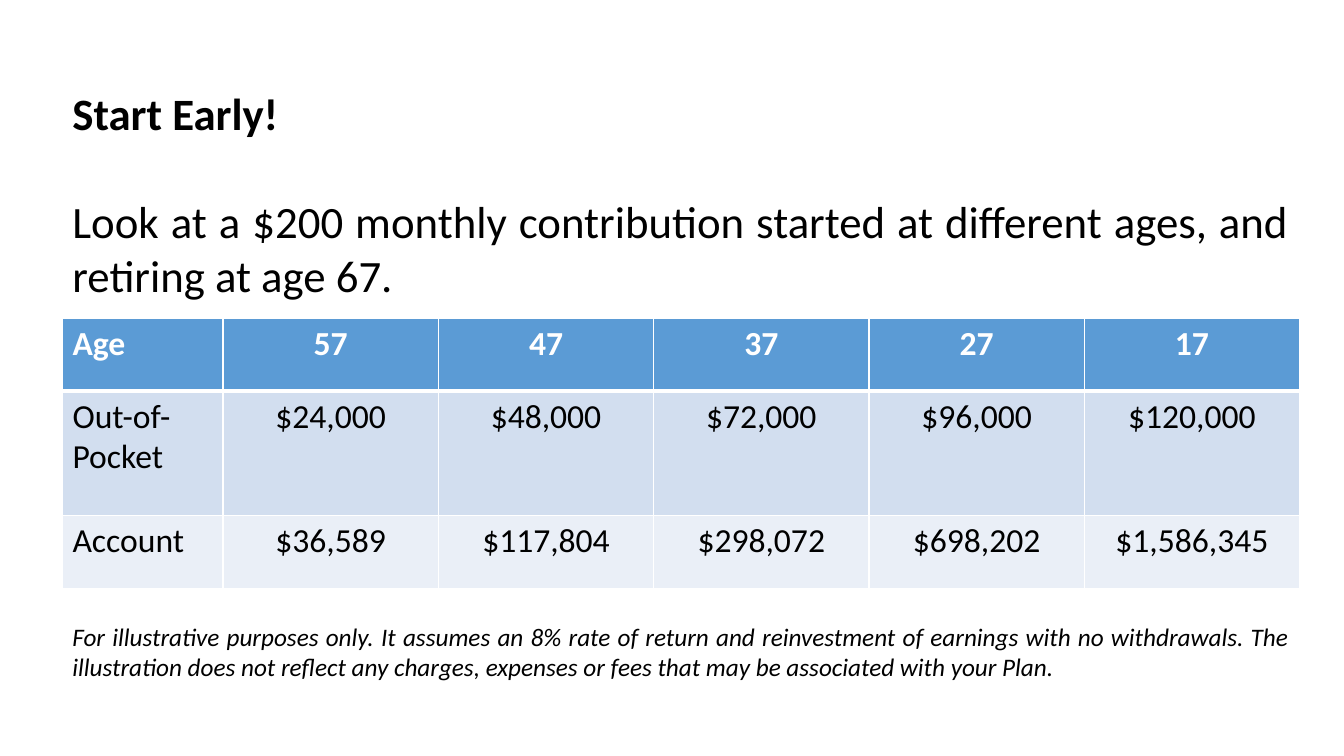
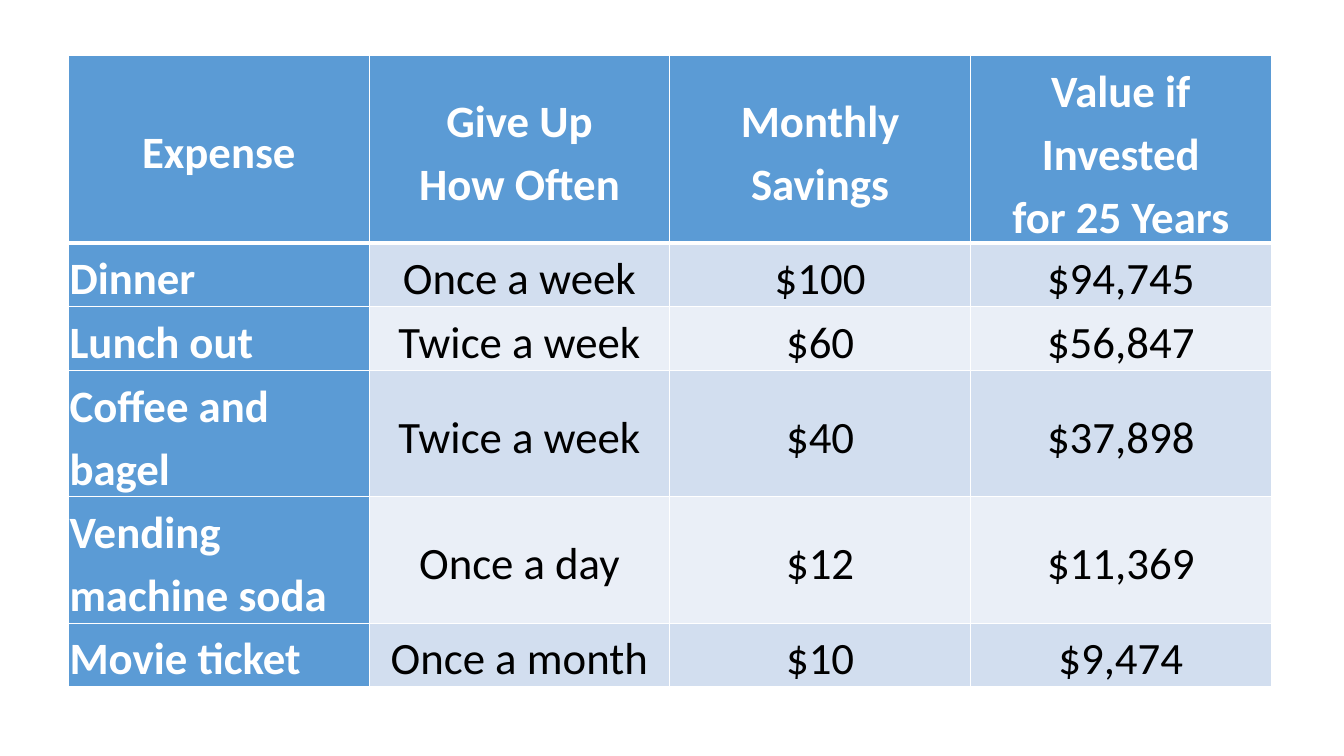
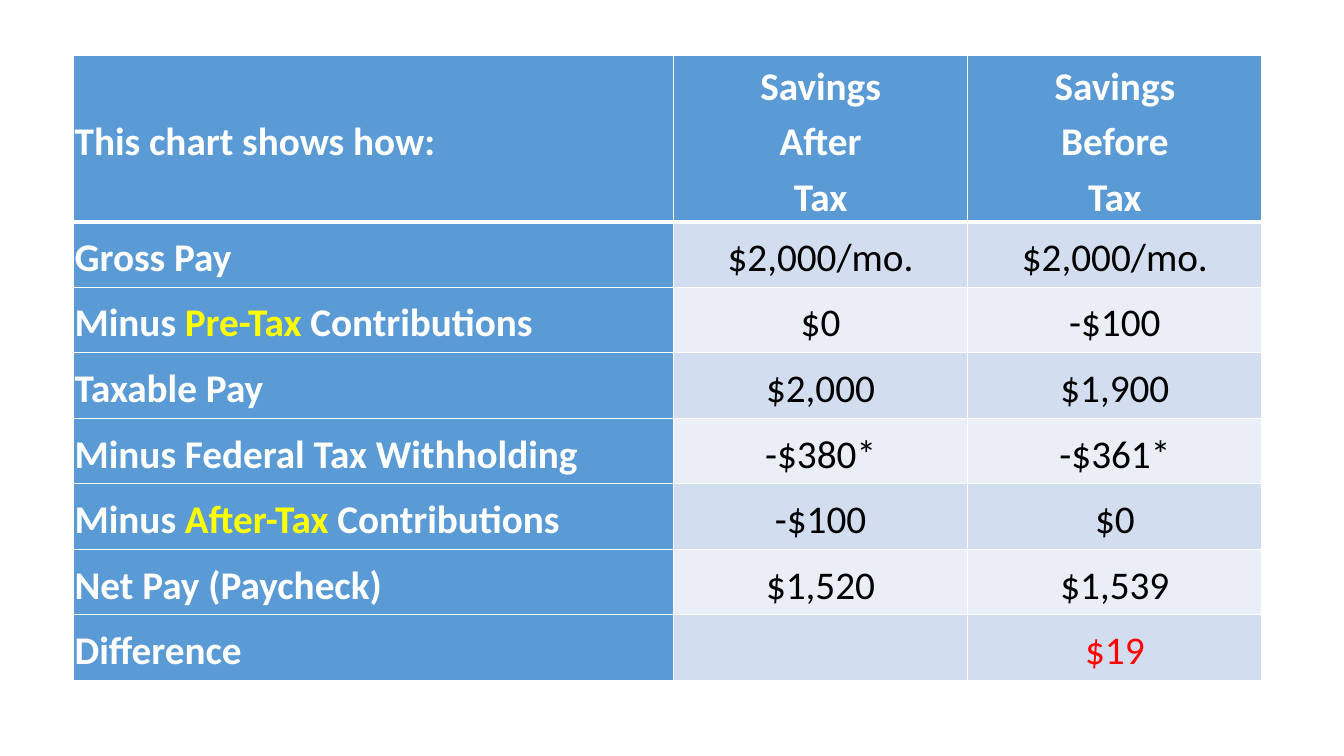
import dataclasses

import lxml.etree
import pptx
import pptx.dml.color
import pptx.enum.text
import pptx.oxml.ns
import pptx.util


@dataclasses.dataclass(frozen=True)
class Theme:
    font: str = "Calibri"
    text: str = "000000"
    white: str = "FFFFFF"
    header: str = "5B9BD5"
    bands: tuple = ("D2DEEF", "EAEFF7")
    label_accent: str = "FFFF00"
    value_accent: str = "FF0000"
    body: int = 32
    note: int = 18
    rule: int = 1
    header_rule: int = 3


THEME = Theme()
ALIGN = pptx.enum.text.PP_ALIGN
rgb = pptx.dml.color.RGBColor.from_string

deck = pptx.Presentation()
deck.slide_width = pptx.util.Inches(13.33)
deck.slide_height = pptx.util.Inches(7.5)

# The grid has 100 columns and 100 rows
COLUMN = deck.slide_width / 100
ROW = deck.slide_height / 100


def style(span, size, color, bold=False, italic=False):
    span.font.name = THEME.font
    span.font.size = pptx.util.Pt(size)
    span.font.color.rgb = rgb(color)
    span.font.bold = bold
    span.font.italic = italic


def draw_border(cell, side, width):
    line = lxml.etree.SubElement(
        cell._tc.get_or_add_tcPr(), pptx.oxml.ns.qn("a:ln" + side),
        w=str(pptx.util.Pt(width)))
    fill = lxml.etree.SubElement(line, pptx.oxml.ns.qn("a:solidFill"))
    lxml.etree.SubElement(fill, pptx.oxml.ns.qn("a:srgbClr"), val=THEME.white)


pages = [deck.slides.add_slide(deck.slide_layouts[6]) for number in range(3)]

# Heading, lead and footnote around the first table: text, size, bold, italic, gap above
messages = [
    ("Start Early!", THEME.body, True, False, 0),
    ("Look at a $200 monthly contribution started at different ages, "
     "and retiring at age 67.", THEME.body, False, False, 39),
    ("For illustrative purposes only. It assumes an 8% rate of return and "
     "reinvestment of earnings with no withdrawals. The illustration does not "
     "reflect any charges, expenses or fees that may be associated with your Plan.",
     THEME.note, False, True, 228),
]
box = pages[0].shapes.add_textbox(
    int(4.65 * COLUMN), int(6.67 * ROW), int(92.05 * COLUMN), int(85.33 * ROW))
frame = box.text_frame
frame.word_wrap = True
frame.margin_top = int(4.67 * ROW)
for index, (text, size, bold, italic, gap) in enumerate(messages):
    para = frame.add_paragraph() if index else frame.paragraphs[0]
    para.text = text
    para.alignment = ALIGN.JUSTIFY
    para.space_before = pptx.util.Pt(gap)
    style(para.runs[0], size, THEME.text, bold, italic)

# Tables, with accented words between bars
tables = [
    dict(left=4.65, top=42.13, size=24, roomy=True, corner=ALIGN.LEFT,
         widths=[11.95] + [16.02] * 5, heights=[9.6, 16.5, 9.6],
         cells=[
             ["Age", "57", "47", "37", "27", "17"],
             ["Out-of-Pocket", "$24,000", "$48,000", "$72,000", "$96,000", "$120,000"],
             ["Account", "$36,589", "$117,804", "$298,072", "$698,202", "$1,586,345"],
         ]),
    dict(left=5.1, top=7.33, size=32, roomy=False, corner=ALIGN.CENTER,
         widths=[22.37] * 4, heights=[24.8, 8.4, 8.4, 16.7, 16.7, 8.4],
         cells=[
             ["Expense", "Give Up\nHow Often", "Monthly\nSavings",
              "Value if Invested\nfor 25 Years"],
             ["Dinner", "Once a week", "$100", "$94,745"],
             ["Lunch out", "Twice a week", "$60", "$56,847"],
             ["Coffee and bagel", "Twice a week", "$40", "$37,898"],
             ["Vending machine soda", "Once a day", "$12", "$11,369"],
             ["Movie ticket", "Once a month", "$10", "$9,474"],
         ]),
    dict(left=5.48, top=7.33, size=28, roomy=False, corner=ALIGN.LEFT,
         widths=[44.63, 21.9, 21.9], heights=[22] + [8.67] * 7,
         cells=[
             ["This chart shows how:", "Savings\nAfter\nTax", "Savings\nBefore\nTax"],
             ["Gross Pay", "$2,000/mo.", "$2,000/mo."],
             ["Minus |Pre-Tax |Contributions", "$0", "-$100"],
             ["Taxable Pay", "$2,000", "$1,900"],
             ["Minus Federal Tax Withholding", "-$380*", "-$361*"],
             ["Minus |After-Tax| Contributions", "-$100", "$0"],
             ["Net Pay (Paycheck)", "$1,520", "$1,539"],
             ["Difference", "", "|$19"],
         ]),
]

for page, plan in zip(pages, tables):
    grid = page.shapes.add_table(
        len(plan["heights"]), len(plan["widths"]),
        int(plan["left"] * COLUMN), int(plan["top"] * ROW),
        int(sum(plan["widths"]) * COLUMN), int(sum(plan["heights"]) * ROW)).table
    for column, width in zip(grid.columns, plan["widths"]):
        column.width = int(width * COLUMN)
    for row, height in zip(grid.rows, plan["heights"]):
        row.height = int(height * ROW)

    for r, texts in enumerate(plan["cells"]):
        for c, text in enumerate(texts):
            cell = grid.cell(r, c)
            is_label = r == 0 or (c == 0 and not plan["roomy"])

            # Borders go before the fill, with a thick rule under the header
            for side in "LRTB":
                under_header = (r, side) in ((0, "B"), (1, "T"))
                draw_border(cell, side, THEME.header_rule if under_header else THEME.rule)
            cell.fill.solid()
            cell.fill.fore_color.rgb = rgb(
                THEME.header if is_label else THEME.bands[(r - 1) % 2])

            para = cell.text_frame.paragraphs[0]
            para.alignment = ALIGN.CENTER if c else ALIGN.LEFT
            if r == c == 0:
                para.alignment = plan["corner"]
            if not plan["roomy"]:
                cell.vertical_anchor = pptx.enum.text.MSO_ANCHOR.MIDDLE
                cell.margin_left = cell.margin_right = pptx.util.Inches(0.01)
                cell.margin_top = cell.margin_bottom = pptx.util.Inches(0.01)
                para.line_spacing = 1.15

            # Every second part is accented
            plain = THEME.white if is_label else THEME.text
            accent = THEME.label_accent if is_label else THEME.value_accent
            for part, words in enumerate(text.split("|")):
                for line, piece in enumerate(words.split("\n")):
                    if line:
                        para.add_line_break()
                    if piece:
                        span = para.add_run()
                        span.text = piece
                        style(span, plan["size"], accent if part % 2 else plain, is_label)

deck.save("out.pptx")
